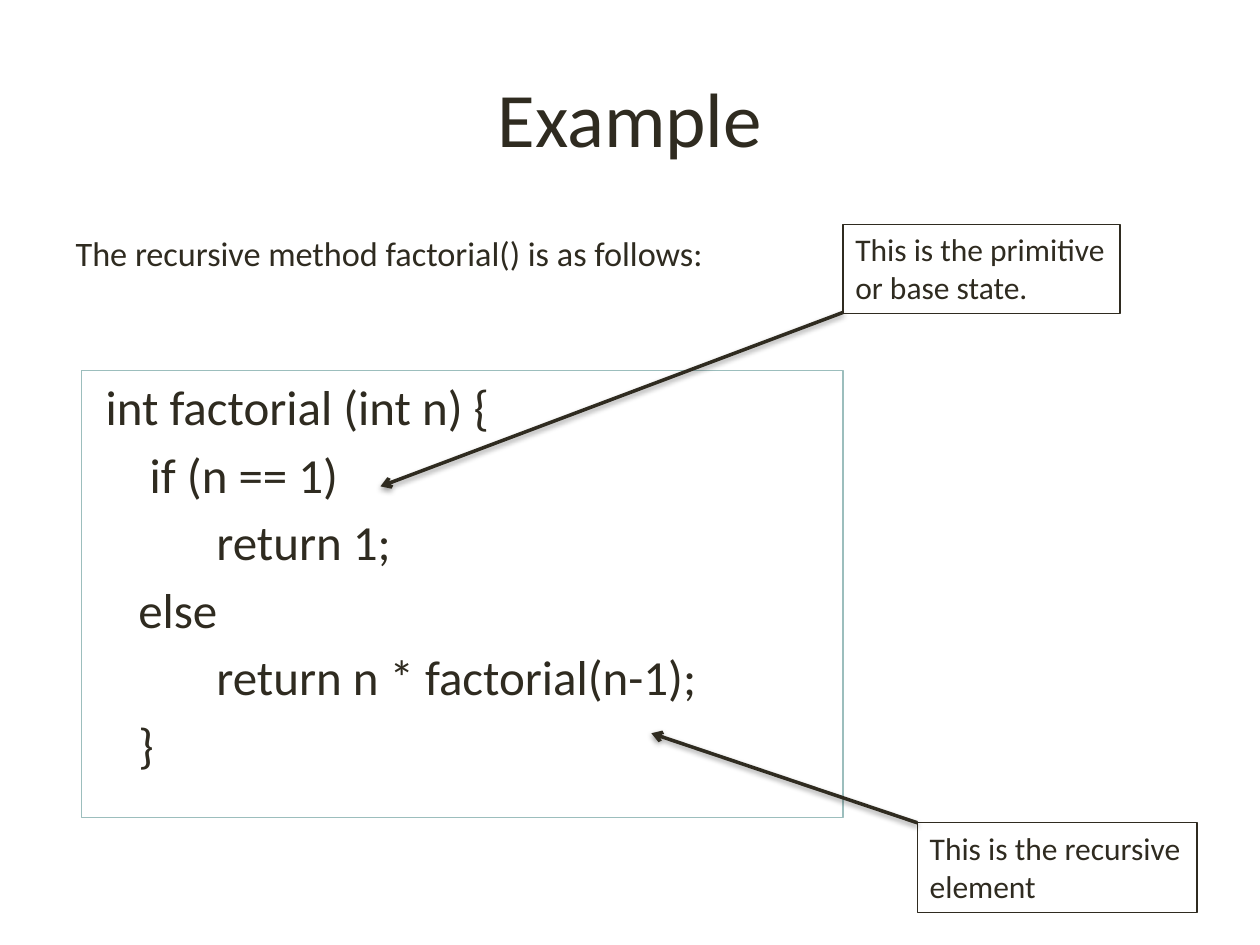
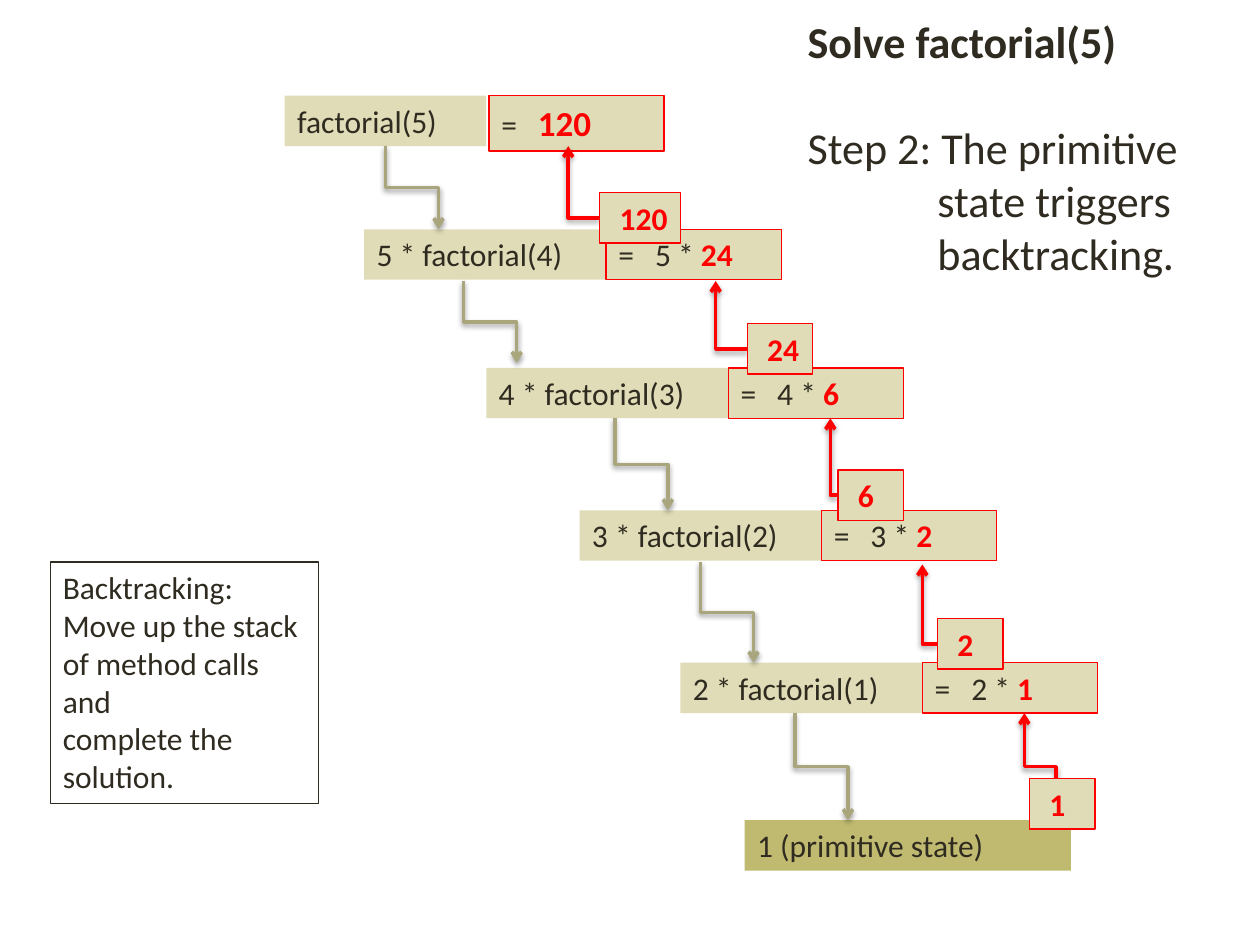
from lxml import etree
from pptx import Presentation
from pptx.dml.color import RGBColor
from pptx.enum import shapes, text
from pptx.oxml import ns
from pptx.util import Emu, Pt

PX = 9144  # 100 px to the inch
FONT = "Calibri"
COLORS = {
    "ink": "2F2B20",
    "frame": "9CBEBD",
    "call": "DFDCB7",
    "base": "C0BA71",
    "descend": "A9A57C",
    "back": "FF0000",
    "shadow": "000000",
}


def px(n):
    return Emu(round(n * PX))


def rgb(name):
    return RGBColor.from_string(COLORS[name])


class Deck:
    """Holds the presentation, its style and the current slide."""

    def __init__(self):
        self.prs = Presentation()
        self.prs.slide_width, self.prs.slide_height = px(1000), px(750)
        self.slide = None

    def new_slide(self, layout):
        self.slide = self.prs.slides.add_slide(self.prs.slide_layouts[layout])

    def run(self, p, content, size=18, color="ink", bold=False):
        r = p.add_run()
        r.text = content
        f = r.font
        f.name, f.size, f.bold = FONT, Pt(size), bold
        f.color.rgb = rgb(color)

    def indent(self, p, left, first=0):
        pPr = p._p.get_or_add_pPr()
        pPr.set("marL", str(px(left)))
        pPr.set("indent", str(px(first)))
        return pPr

    def tab(self, p, pos):
        tabs = etree.SubElement(p._p.get_or_add_pPr(), ns.qn("a:tabLst"))
        etree.SubElement(tabs, ns.qn("a:tab"), pos=str(px(pos)), algn="l")

    def placeholder(self, idx, x, y, w, h):
        sp = self.slide.placeholders[idx]
        sp.left, sp.top, sp.width, sp.height = map(px, (x, y, w, h))
        tf = sp.text_frame
        tf.auto_size = text.MSO_AUTO_SIZE.NONE
        return tf

    def title(self, x, y, w, h, align):
        tf = self.placeholder(0, x, y, w, h)
        tf.vertical_anchor = text.MSO_ANCHOR.MIDDLE
        tf.paragraphs[0].alignment = align
        return tf

    def body(self, content, x, y, w, h, top, size):
        tf = self.placeholder(1, x, y, w, h)
        tf.margin_top, tf.margin_bottom = px(top), 0
        p = tf.paragraphs[0]
        p.space_before = Pt(0)
        pPr = self.indent(p, 0)
        etree.SubElement(pPr, ns.qn("a:buNone"))
        self.run(p, content, size)

    def box(self, x, y, w, h, fill=None, line=None, lines=(), wrap=True, grow=True):
        sp = self.slide.shapes.add_textbox(px(x), px(y), px(w), px(h))
        if fill:
            sp.fill.solid()
            sp.fill.fore_color.rgb = rgb(fill)
        if line:
            sp.line.color.rgb = rgb(line)
            sp.line.width = Pt(0.75)
        tf = sp.text_frame
        tf.word_wrap = wrap
        size = text.MSO_AUTO_SIZE
        tf.auto_size = size.SHAPE_TO_FIT_TEXT if grow else size.NONE
        for i, content in enumerate(lines):
            p = tf.add_paragraph() if i else tf.paragraphs[0]
            self.run(p, content)
        return tf

    def arrow(self, start, end, color, kind="straight"):
        (x1, y1), (x2, y2) = start, end
        connector = shapes.MSO_CONNECTOR.ELBOW
        rot = 0
        if kind == "straight":
            connector = shapes.MSO_CONNECTOR.STRAIGHT
        elif kind == "step":  # vertical, horizontal, vertical
            cx, cy, dx, dy = (x1 + x2) / 2, (y1 + y2) / 2, (x2 - x1) / 2, (y2 - y1) / 2
            x1, y1, x2, y2 = cx + dy, cy - dx, cx - dy, cy + dx
            rot = 270
        else:  # corner: horizontal, then vertical
            x1, y1, x2, y2 = x2, y2, x1, y1
            rot = 180
        sp = self.slide.shapes.add_connector(connector, px(x1), px(y1), px(x2), px(y2))
        sp.line.color.rgb = rgb(color)
        sp.line.width = Pt(2)
        spPr = sp._element.spPr
        if rot:
            spPr.find(ns.qn("a:xfrm")).set("rot", str(rot * 60000))
        if kind == "corner":
            spPr.find(ns.qn("a:prstGeom")).set("prst", "bentConnector2")
        etree.SubElement(spPr.find(ns.qn("a:ln")), ns.qn("a:tailEnd"), type="arrow")
        effects = etree.SubElement(spPr, ns.qn("a:effectLst"))
        shadow = etree.SubElement(effects, ns.qn("a:outerShdw"), blurRad="40000",
                                  dist="20000", dir="5400000", rotWithShape="0")
        clr = etree.SubElement(shadow, ns.qn("a:srgbClr"), val=COLORS["shadow"])
        etree.SubElement(clr, ns.qn("a:alpha"), val="38000")


def example_slide(d):
    d.new_slide(1)
    tf = d.title(50, 30, 900, 125, text.PP_ALIGN.CENTER)
    d.run(tf.paragraphs[0], "Example", 44)
    d.body("The recursive method factorial() is as follows:", 50, 135, 900, 85, 49, 19.6)

    # Callouts
    d.box(669, 178, 220, 71, line="ink", wrap=False,
          lines=["This is the primitive", "or base state."])
    d.box(728, 653, 222, 71, line="ink", wrap=False,
          lines=["This is the recursive", "element"])

    # Code listing: indent and text
    code = [
        (9, "int factorial (int n) {"),
        (44, "if (n == 1)"),
        (97, "return 1;"),
        (35, "else"),
        (97, "return n * factorial(n-1);"),
        (35, "}"),
    ]
    tf = d.box(65, 294, 604, 355, line="frame", grow=False)
    for i, (left, content) in enumerate(code):
        p = tf.add_paragraph() if i else tf.paragraphs[0]
        p.space_before = Pt(5)
        d.indent(p, left)
        d.run(p, content, 28)

    d.arrow((669, 248), (302, 386), "ink")
    d.arrow((728, 653), (517, 582), "ink")


def backtracking_slide(d):
    d.new_slide(5)
    tf = d.title(631, 39, 430, 155, text.PP_ALIGN.LEFT)
    d.run(tf.paragraphs[0], "Solve factorial(5)", 25.2, bold=True)
    p = tf.add_paragraph()
    p.alignment = text.PP_ALIGN.LEFT
    p.space_before = Pt(30)
    d.indent(p, 103, -103)
    for i, content in enumerate(["Step 2: The primitive", "state triggers", "backtracking."]):
        if i:
            p.add_line_break()
        d.run(p, content, 25.2)

    # Call stack: label, left, top, width, fill
    calls = [
        ("factorial(5)", 226, 76, 160, "call"),
        ("5 * factorial(4)", 289, 182, 193, "call"),
        ("4 * factorial(3)", 386, 292, 193, "call"),
        ("3 * factorial(2)", 460, 405, 193, "call"),
        ("2 * factorial(1)", 540, 526, 193, "call"),
        ("1 (primitive state)", 591, 651, 259, "base"),
    ]
    for label, x, y, w, fill in calls:
        d.box(x, y, w, 40, fill, lines=[label])

    # Descending arrows: left and both heights
    for x, top, bottom in [(306, 116, 182), (368, 223, 288), (488, 332, 405),
                           (556, 446, 526), (631, 566, 651)]:
        d.arrow((x, top), (x + 42, bottom), "descend", "step")

    d.box(40, 446, 213, 192, line="ink",
          lines=["Backtracking:", "Move up the stack of method calls and",
                 "complete the solution."])

    # Results: left, top, height, factor, value, size
    results = [
        (388, 76, 44, "", "120", 20),
        (481, 182, 40, "5 * ", "24", 18),
        (578, 292, 40, "4 * ", "6", 18),
        (652, 405, 40, "3 * ", "2", 18),
        (732, 526, 40, "2 * ", "1", 18),
    ]
    # Returned values: left, top, width, arrow start (None: left middle), arrow tip
    returned = [
        (476, 153, 64, None, (451, 116)),
        (593, 257, 52, None, (568, 223)),
        (665, 373, 52, None, (659, 332)),
        (744, 491, 52, None, (732, 448)),
        (817, 618, 52, (838, 651), (813, 566)),
    ]
    for x, y, h, factor, value, size in results:
        p = d.box(x, y, 139, h, "call", "back").paragraphs[0]
        d.tab(p, 29)
        d.run(p, "=\t" + factor)
        d.run(p, value, size, "back", True)
    for x, y, w, start, tip in returned:
        d.arrow(start or (x, y + 20), tip, "back", "step" if start else "corner")
    for (x, y, w, _, _), (*_, value, _) in zip(returned, results):
        p = d.box(x, y, w, 40, "call", "back").paragraphs[0]
        d.indent(p, 6)
        d.run(p, value, color="back", bold=True)


def main():
    d = Deck()
    example_slide(d)
    backtracking_slide(d)
    d.prs.save("out.pptx")


if __name__ == "__main__":
    main()
